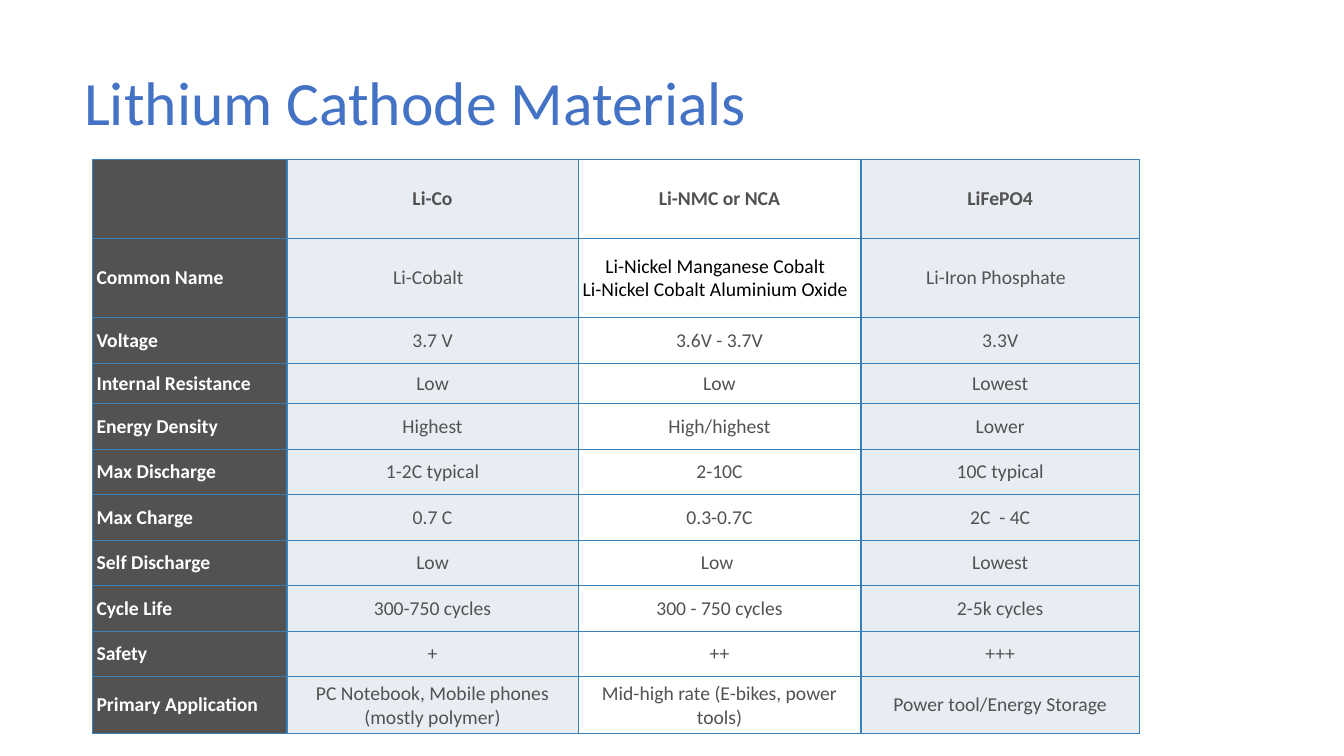
import pptx
import pptx.dml.color
import pptx.enum.text
import pptx.oxml
import pptx.oxml.ns
import pptx.util

RGBColor = pptx.dml.color.RGBColor
PP_ALIGN = pptx.enum.text.PP_ALIGN
MSO_ANCHOR = pptx.enum.text.MSO_ANCHOR

PX = 6350
FONT = "Calibri"
BLUE = RGBColor(0x44, 0x72, 0xC4)
BORDER = RGBColor(0x3A, 0x81, 0xBA)
DARK = RGBColor(0x53, 0x52, 0x52)
PALE = RGBColor(0xE8, 0xEC, 0xF3)
WHITE = RGBColor(0xFF, 0xFF, 0xFF)
BLACK = RGBColor(0x00, 0x00, 0x00)

COLUMN_WIDTHS = [278, 416, 404, 398]
COLUMN_FILLS = [DARK, PALE, WHITE, PALE]
ROW_HEIGHTS = [113, 113, 65, 58] + [65] * 6 + [76]
MATERIALS = [
    ["", "Li-Co", "Li-NMC or NCA", "LiFePO4"],
    ["Common Name", "Li-Cobalt",
     "Li-Nickel Manganese Cobalt\nLi-Nickel Cobalt Aluminium Oxide", "Li-Iron Phosphate"],
    ["Voltage", "3.7 V", "3.6V - 3.7V", "3.3V"],
    ["Internal Resistance", "Low", "Low", "Lowest"],
    ["Energy Density", "Highest", "High/highest", "Lower"],
    ["Max Discharge", "1-2C typical", "2-10C", "10C typical"],
    ["Max Charge", "0.7 C", "0.3-0.7C", "2C  - 4C"],
    ["Self Discharge", "Low", "Low ", "Lowest"],
    ["Cycle Life", "300-750 cycles", "300 - 750 cycles", "2-5k cycles"],
    ["Safety", "+", "++", "+++"],
    ["Primary Application", "PC Notebook, Mobile phones (mostly polymer)",
     "Mid-high rate (E-bikes, power tools)", "Power tool/Energy Storage"],
]


def px(n):
    return pptx.util.Emu(n * PX)


def style_paragraph(p, size, color, bold=False, align=PP_ALIGN.LEFT):
    p.alignment = align
    p.font.name = FONT
    p.font.size = pptx.util.Pt(size)
    p.font.bold = bold
    p.font.color.rgb = color


def add_title(s, left, top, width, height):
    tf = s.shapes.add_textbox(px(left), px(top), px(width), px(height)).text_frame
    tf.word_wrap = True
    tf.vertical_anchor = MSO_ANCHOR.MIDDLE
    p = tf.paragraphs[0]
    p.text = "Lithium Cathode Materials"
    p.line_spacing = 0.9
    style_paragraph(p, 44, BLUE)


def set_borders(cell):
    tc_pr = cell._tc.get_or_add_tcPr()
    for i, side in enumerate(("lnL", "lnR", "lnT", "lnB")):
        tc_pr.insert(i, pptx.oxml.parse_xml(
            f'<a:{side} {pptx.oxml.ns.nsdecls("a")} w="{pptx.util.Pt(0.96)}">'
            f'<a:solidFill><a:srgbClr val="{BORDER}"/></a:solidFill></a:{side}>'))


def cell_margins(row, col):
    if row == 0:
        return 10, 10
    if col == 0:
        return 6, 6 if row == 1 else 2
    return 2, 14 if row == 1 else 2


def fill_cell(cell, row, col, text):
    cell.fill.solid()
    cell.fill.fore_color.rgb = COLUMN_FILLS[col]
    set_borders(cell)
    left, right = cell_margins(row, col)
    cell.margin_left, cell.margin_right = px(left), px(right)
    cell.margin_top = cell.margin_bottom = px(7)
    cell.vertical_anchor = MSO_ANCHOR.MIDDLE
    cell.text = text
    color = WHITE if col == 0 else BLACK if (row, col) == (1, 2) else DARK
    align = PP_ALIGN.LEFT if col == 0 else PP_ALIGN.CENTER
    for p in cell.text_frame.paragraphs:
        style_paragraph(p, 14, color, row == 0 or col == 0, align)


def add_materials_table(s, left, top):
    table = s.shapes.add_table(
        len(ROW_HEIGHTS), len(COLUMN_WIDTHS), px(left), px(top),
        px(sum(COLUMN_WIDTHS)), px(sum(ROW_HEIGHTS))).table
    for column, width in zip(table.columns, COLUMN_WIDTHS):
        column.width = px(width)
    for row, height in zip(table.rows, ROW_HEIGHTS):
        row.height = px(height)
    for r, texts in enumerate(MATERIALS):
        for c, text in enumerate(texts):
            fill_cell(table.cell(r, c), r, c, text)


def main():
    prs = pptx.Presentation()
    prs.slide_width, prs.slide_height = px(1920), px(1080)
    s = prs.slides.add_slide(prs.slide_layouts[6])
    add_title(s, 106, 46, 1705, 209)
    add_materials_table(s, 132, 228)
    prs.save("out.pptx")


if __name__ == "__main__":
    main()
